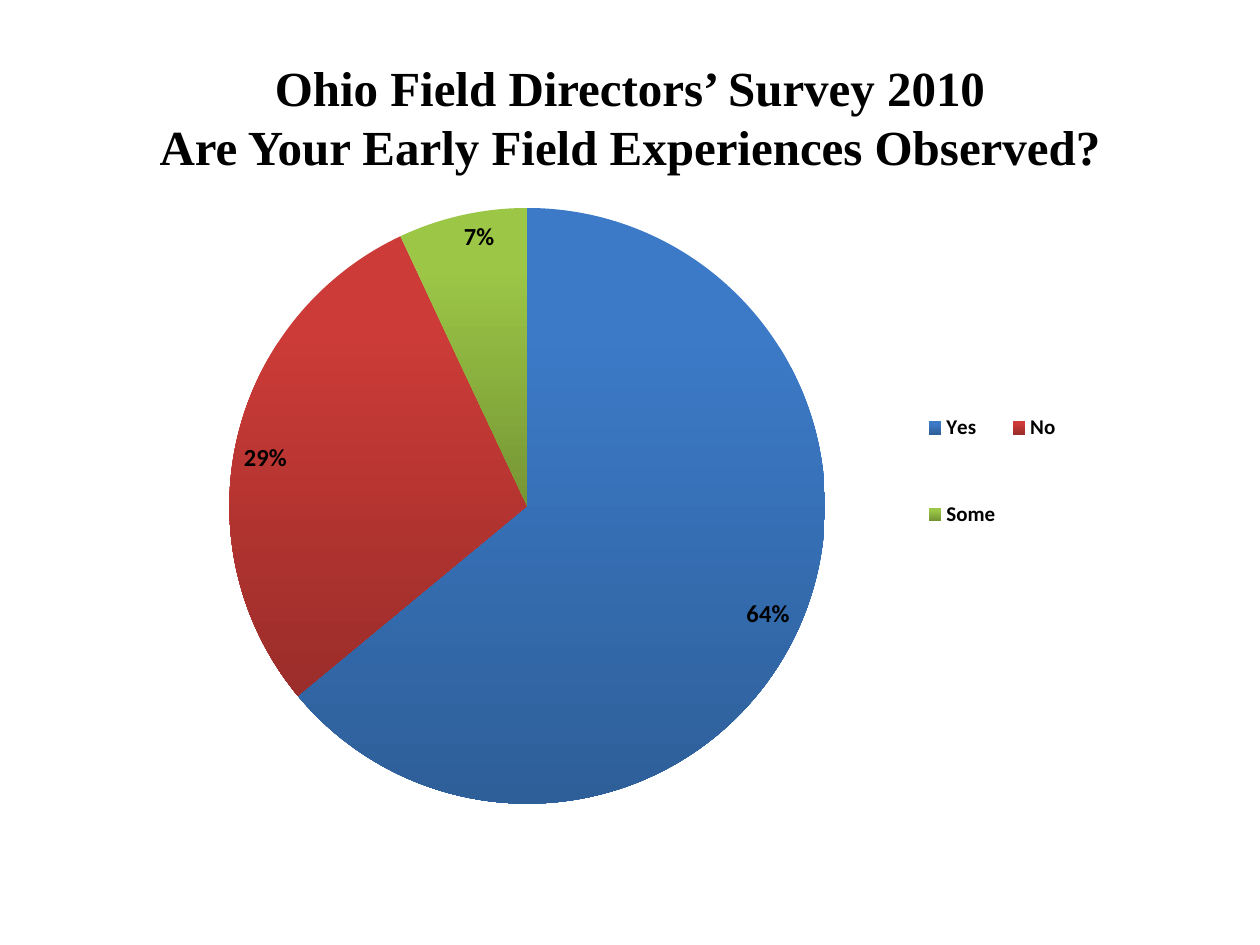
from typing import NamedTuple

from lxml.etree import SubElement as Sub
from pptx import Presentation
from pptx.chart.data import CategoryChartData as Data
from pptx.dml.color import RGBColor
from pptx.enum.chart import XL_CHART_TYPE as Kind
from pptx.enum.chart import XL_LABEL_POSITION as Spot
from pptx.enum.chart import XL_LEGEND_POSITION as Side
from pptx.enum.text import MSO_ANCHOR as Anchor
from pptx.enum.text import PP_ALIGN as Align
from pptx.oxml.ns import qn
from pptx.util import Inches, Pt

BLACK = RGBColor(0, 0, 0)


class Slice(NamedTuple):
    name: str
    share: int
    light: RGBColor
    dark: RGBColor


SLICES = [
    Slice("Yes", 64, RGBColor(0x3C, 0x7A, 0xC8), RGBColor(0x2E, 0x5F, 0x99)),
    Slice("No", 29, RGBColor(0xCC, 0x3B, 0x37), RGBColor(0x9B, 0x2D, 0x2A)),
    Slice("Some", 7, RGBColor(0x9B, 0xC6, 0x46), RGBColor(0x76, 0x96, 0x35)),
]


def style(font, size: float, bold: bool = False, face: str = "Calibri") -> None:
    font.name = face
    font.size = Pt(size)
    font.bold = bold
    font.color.rgb = BLACK


def add_text(slide, text: str, box: tuple, *, size: float, bold: bool, face: str) -> None:
    frame = slide.shapes.add_textbox(*map(Inches, box)).text_frame
    frame.word_wrap = True
    frame.vertical_anchor = Anchor.MIDDLE
    for i, line in enumerate(text.split("\n")):
        para = frame.add_paragraph() if i else frame.paragraphs[0]
        para.alignment = Align.CENTER
        run = para.add_run()
        run.text = line
        style(run.font, size, bold, face)


def shade(fill, part: Slice) -> None:
    """Run the slice colour from light at the top to dark at the bottom."""
    fill.gradient()
    fill.gradient_angle = 270
    for stop, color, pos in zip(fill.gradient_stops, (part.light, part.dark), (0.2, 1)):
        stop.color.rgb = color
        stop.position = pos


def place(layout, inner: bool = False, **box: float) -> None:
    """Fix a chart part at fractions of the chart area."""
    for child in list(layout):
        layout.remove(child)
    manual = Sub(layout, qn("c:manualLayout"))
    if inner:
        Sub(manual, qn("c:layoutTarget")).set("val", "inner")
    for key in "xy":
        Sub(manual, qn(f"c:{key}Mode")).set("val", "edge")
    for key, val in box.items():
        Sub(manual, qn(f"c:{key}")).set("val", str(val))


def get_layout(node, before: str):
    """Return the layout of a chart part, made ahead of the given child if missing."""
    layout = node.find(qn("c:layout"))
    if layout is None:
        layout = node.makeelement(qn("c:layout"))
        node.find(qn(before)).addprevious(layout)
    return layout


def add_pie(slide, parts: list[Slice], box: tuple) -> None:
    data = Data()
    data.categories = [part.name for part in parts]
    data.add_series("Series 1", [part.share for part in parts])
    chart = slide.shapes.add_chart(Kind.PIE, *map(Inches, box), data).chart
    chart.has_title = False
    style(chart.font, 10)
    plot = chart.plots[0]
    plot.vary_by_categories = True
    for i, part in enumerate(parts):
        look = plot.series[0].points[i].format
        shade(look.fill, part)
        look.line.fill.background()

    labels = plot.series[0].data_labels
    labels.show_percentage = True
    labels.show_value = False
    labels.number_format = "0%"
    labels.number_format_is_linked = False
    labels.position = Spot.INSIDE_END
    style(labels.font, 14, True)

    chart.has_legend = True
    key = chart.legend
    key.position = Side.RIGHT
    key.include_in_layout = False
    style(key.font, 12, True)

    root = chart.element
    area = root.find(".//" + qn("c:plotArea"))
    place(get_layout(area, "c:pieChart"), True, x=0.2, y=0.03, w=0.53, h=0.94)
    legend = root.find(".//" + qn("c:legend"))
    place(get_layout(legend, "c:overlay"), x=0.81, y=0.26, w=0.13, h=0.37)


def main() -> None:
    deck = Presentation()
    deck.slide_width, deck.slide_height = Inches(10), Inches(7.5)
    slide = deck.slides.add_slide(deck.slide_layouts[6])
    add_pie(slide, SLICES, (0, 1.5, 9, 5.03))
    add_text(
        slide,
        "Ohio Field Directors’ Survey 2010\nAre Your Early Field Experiences Observed?",
        (0.5, 0.3, 9, 1.25),
        size=28,
        bold=True,
        face="Times New Roman",
    )
    deck.save("out.pptx")


if __name__ == "__main__":
    main()
